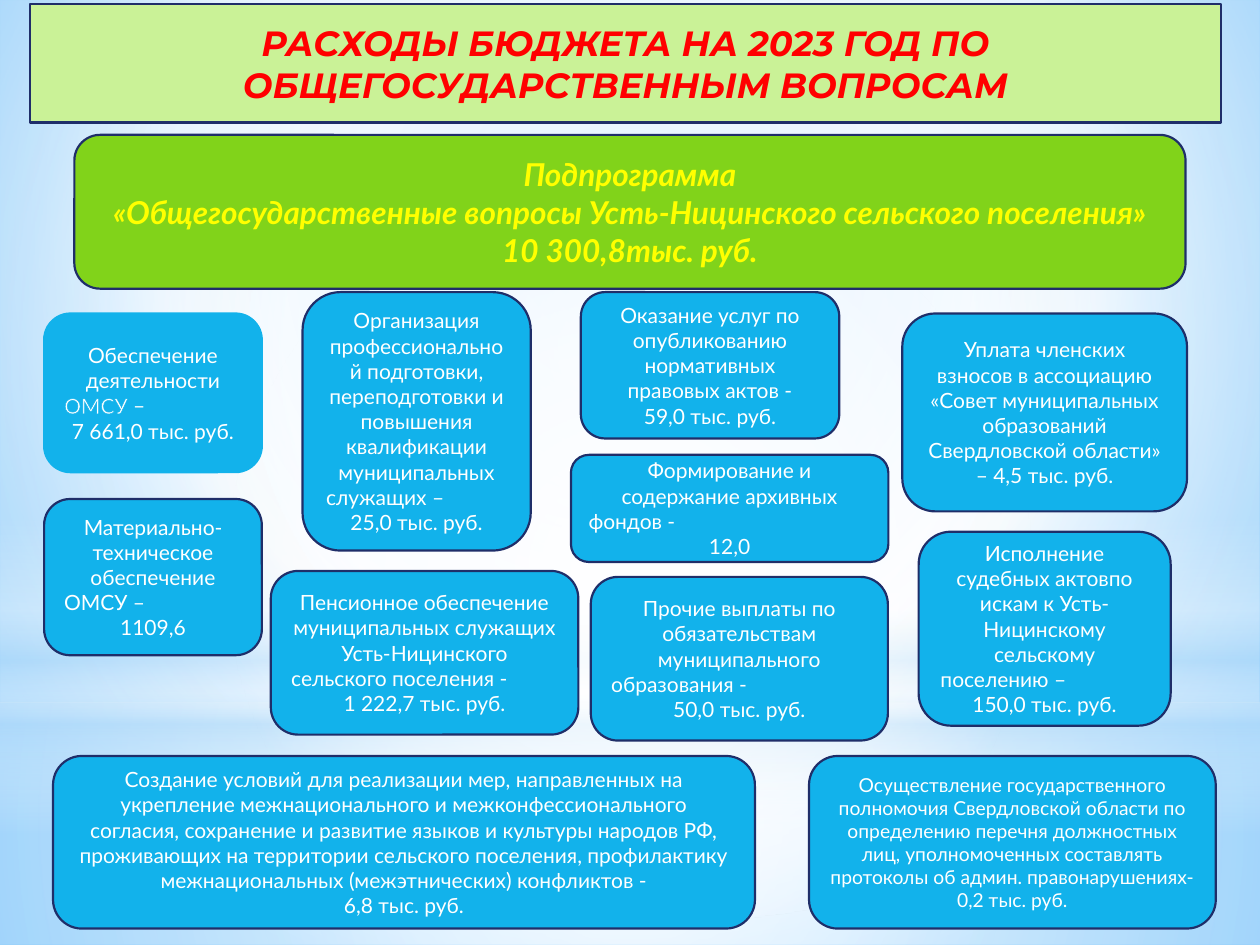
from dataclasses import dataclass

from lxml import etree
from pptx import Presentation
from pptx.dml.color import RGBColor as Rgb
from pptx.enum.shapes import MSO_SHAPE as Kind
from pptx.enum.text import MSO_ANCHOR as Anchor, MSO_AUTO_SIZE as Fit, PP_ALIGN as Align
from pptx.oxml import parse_xml
from pptx.oxml.ns import nsdecls, qn
from pptx.util import Cm, Pt


@dataclass
class Theme:
    navy: str = "1F2E69"
    lime: str = "CAF297"
    green: str = "81D31A"
    blue: str = "12B2EB"
    white: str = "FFFFFF"
    red: str = "FF0000"
    yellow: str = "FFFF00"
    mist: str = "B4DCFA"
    sky: str = "9ED5FF"
    deep: str = "5BB9FF"
    head: str = "Montserrat"
    body: str = "Lato"
    title: int = 20
    lead: int = 18
    text: int = 12
    small: int = 11
    edge: float = 1.25


def blend(node, stops, focus=None):
    marks = "".join(
        f'<a:gs pos="{pos * 1000}"><a:srgbClr val="{tone}">'
        f'<a:alpha val="{alpha * 1000}"/></a:srgbClr></a:gs>'
        for pos, tone, alpha in stops)
    shade = '<a:lin ang="5400000" scaled="0"/>'
    if focus:
        rect = " ".join(f'{side}="{n * 1000}"' for side, n in zip("ltrb", focus))
        shade = f'<a:path path="circle"><a:fillToRect {rect}/></a:path>'
    old = node.find(".//" + qn("a:solidFill"))
    old.getparent().replace(old, parse_xml(
        f'<a:gradFill {nsdecls("a")} rotWithShape="1"><a:gsLst>{marks}</a:gsLst>{shade}</a:gradFill>'))


def dress(shape, fill, edge, font, size, ink, bold=False):
    shape.fill.solid()
    shape.fill.fore_color.rgb = Rgb.from_string(fill)
    shape.line.color.rgb = Rgb.from_string(edge)
    shape.line.width = Pt(theme.edge)
    frame = shape.text_frame
    frame.word_wrap = True
    frame.auto_size = Fit.NONE
    frame.vertical_anchor = Anchor.MIDDLE
    for para in frame.paragraphs:
        para.alignment = para.alignment or Align.CENTER
        for run in para.runs:
            run.font.name = font
            run.font.size = Pt(size)
            run.font.bold = run.font.italic = bold
            run.font.color.rgb = Rgb.from_string(ink)


theme = Theme()
deck = Presentation()
deck.slide_width, deck.slide_height = Cm(25.4), Cm(19.05)
slide = deck.slides.add_slide(deck.slide_layouts[5])
shapes = slide.shapes

slide.background.fill.solid()
blend(slide.element, [(0, theme.sky, 100), (60, theme.white, 100), (100, theme.deep, 100)],
      (20, 10, 20, 60))

mid = (50, 50, 50, 50)
white, mist = theme.white, theme.mist
layers = [
    (Kind.RECTANGLE, 14.17, 4.88, [(0, white, 91), (37, white, 76), (100, mist, 79)], mid),
    (Kind.RECTANGLE, 0, 14.17, [(0, white, 89), (48, white, 62), (100, mist, 79)], mid),
    (Kind.RECTANGLE, 10.46, 6.35, [(0, white, 0), (29, white, 30), (45, mist, 40),
                                   (55, white, 26), (65, mist, 60), (100, white, 0)], None),
    (Kind.OVAL, 4.45, 14.17, [(0, white, 100), (56, white, 0)], mid),
]
for kind, top, high, stops, focus in layers:
    layer = shapes.add_shape(kind, 0, Cm(top), deck.slide_width, Cm(high))
    layer.shadow.inherit = False
    layer.line.fill.background()
    layer.fill.solid()
    blend(layer.element, stops, focus)

title = shapes.title
title.left, title.top, title.width, title.height = Cm(0.61), Cm(0.08), Cm(24), Cm(2.39)
title.element.spPr.find(qn("a:xfrm")).addnext(
    parse_xml(f'<a:prstGeom {nsdecls("a")} prst="ellipse"><a:avLst/></a:prstGeom>'))
title.text_frame.text = "РАСХОДЫ БЮДЖЕТА НА 2023 ГОД ПО ОБЩЕГОСУДАРСТВЕННЫМ ВОПРОСАМ"
dress(title, theme.lime, theme.navy, theme.head, theme.title, theme.red, True)
title.element.getparent().append(title.element)

banner = shapes.add_shape(Kind.ROUNDED_RECTANGLE, Cm(1.5), Cm(2.72), Cm(22.4), Cm(3.1))
banner.shadow.inherit = False
banner.text_frame.text = (
    "Подпрограмма\n«Общегосударственные вопросы Усть-Ницинского сельского поселения»\n"
    "10 300,8тыс. руб.")
dress(banner, theme.green, theme.navy, theme.body, theme.lead, theme.yellow, True)

cards = [
    (0.89, 6.32, 4.39, 3.2, "Обеспечение деятельности", "ОМСУ", "7 661,0 тыс. руб."),
    (0.89, 10.06, 4.39, 3.15, "Материально-техническое обеспечение", "ОМСУ –", "1109,6"),
    (6.1, 5.89, 4.6, 5.21,
     "Организация профессиональной подготовки, переподготовки и повышения квалификации муниципальных",
     "служащих –", "25,0 тыс. руб."),
    (5.46, 11.51, 6.2, 3.3, "Пенсионное обеспечение муниципальных служащих Усть-Ницинского",
     "сельского поселения -", "1 222,7 тыс. руб."),
    (11.71, 5.89, 5.21, 2.95, "Оказание услуг по опубликованию нормативных правовых актов -",
     "", "59,0 тыс. руб."),
    (18.52, 10.72, 5.08, 3.91, "Исполнение судебных актовпо искам к Усть-Ницинскому сельскому",
     "поселению –", "150,0 тыс. руб."),
    (18.19, 6.32, 5.74, 3.99,
     "Уплата членских взносов в ассоциацию «Совет муниципальных образований "
     "Свердловской области» – 4,5 тыс. руб.", "", ""),
    (11.51, 9.17, 6.4, 2.16, "Формирование и содержание архивных", "фондов -", "12,0"),
    (11.91, 11.63, 5.99, 3.3, "Прочие выплаты по обязательствам муниципального",
     "образования -", "50,0 тыс. руб."),
    (1.07, 15.24, 14.15, 3.48,
     "Создание условий для реализации мер, направленных на укрепление межнационального и "
     "межконфессионального согласия, сохранение и развитие языков и культуры народов РФ, "
     "проживающих на территории сельского поселения, профилактику межнациональных "
     "(межэтнических) конфликтов -", "", "6,8 тыс. руб."),
    (16.31, 15.24, 8.2, 3.48,
     "Осуществление государственного полномочия Свердловской области по определению перечня "
     "должностных лиц, уполномоченных составлять протоколы об админ. правонарушениях- "
     "0,2 тыс. руб.", "", ""),
]
for num, (left, top, wide, high, *lines) in enumerate(cards):
    card = shapes.add_shape(Kind.ROUNDED_RECTANGLE, Cm(left), Cm(top), Cm(wide), Cm(high))
    card.shadow.inherit = False
    frame = card.text_frame
    frame.text = "\n".join(filter(None, lines))
    if lines[1]:
        frame.paragraphs[1].alignment = Align.LEFT
    first, last = num == 0, num == len(cards) - 1
    if first:
        frame.paragraphs[1].add_run().text = " –"
    dress(card, theme.blue, theme.blue if first else theme.navy, theme.body,
          theme.small if last else theme.text, theme.white)
    if first:
        props = frame.paragraphs[1].runs[0].font
        mark = frame.paragraphs[1].runs[0]._r.get_or_add_rPr()
        rim = etree.Element(qn("a:ln"), w=str(Pt(0.75)))
        fill = etree.SubElement(rim, qn("a:solidFill"))
        etree.SubElement(fill, qn("a:srgbClr"), val=theme.blue)
        mark.insert(0, rim)

deck.save("out.pptx")
